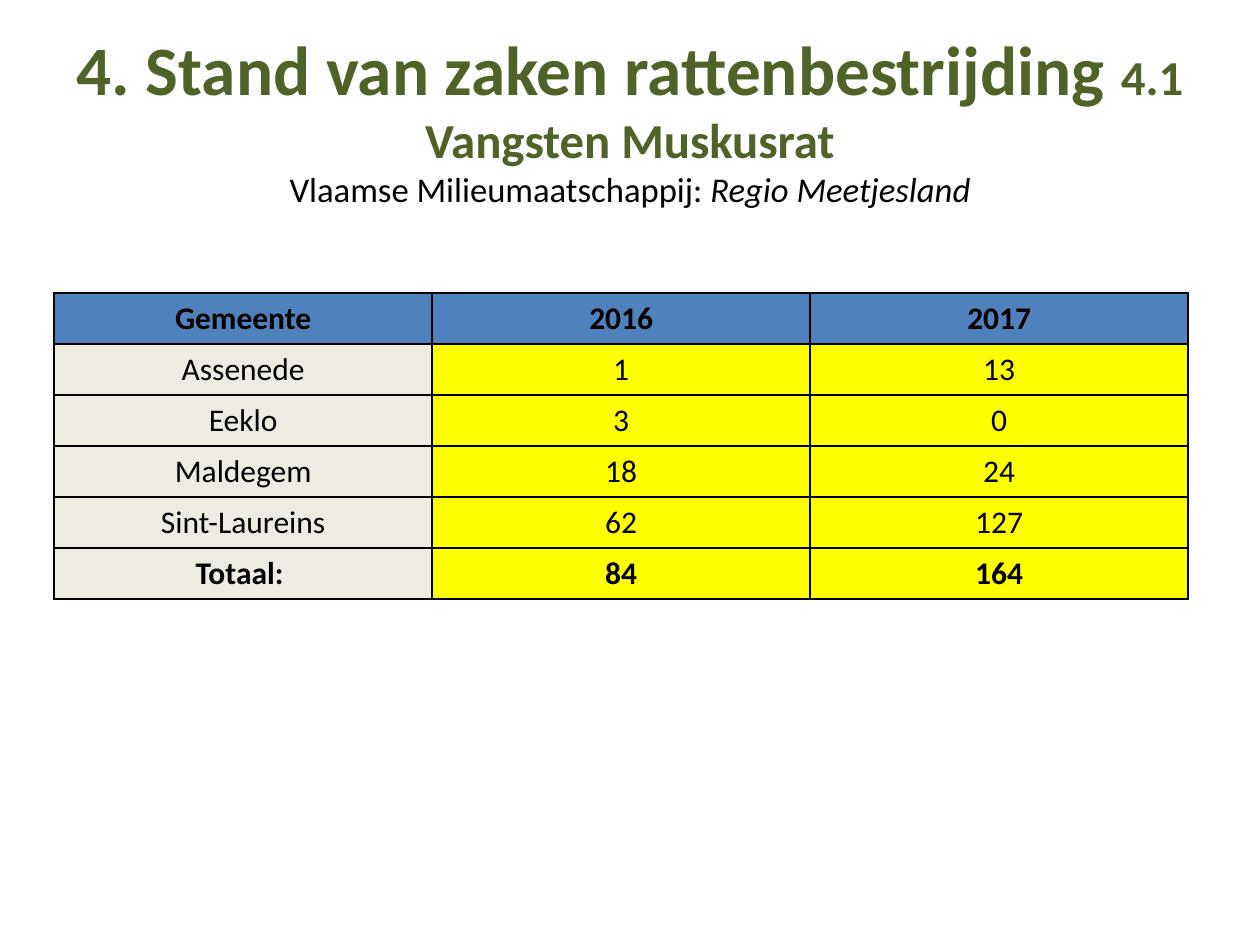
import pptx
import pptx.dml.color
import pptx.enum.text
import pptx.util
from lxml import etree

COLORS = {
    "green": "4F6228",
    "black": "000000",
    "blue": "4F81BD",
    "beige": "EEECE1",
    "yellow": "FFFF00",
}
CENTER = pptx.enum.text.PP_ALIGN.CENTER
MIDDLE = pptx.enum.text.MSO_ANCHOR.MIDDLE

TITLE_LINES = [
    [("4. Stand van zaken rattenbestrijding ", 39.6, "green", True, False),
     ("4.1 Vangsten Muskusrat", 27.9, "green", True, False)],
    [("Vlaamse Milieumaatschappij: ", 19.8, "black", False, False),
     ("Regio Meetjesland", 19.8, "black", False, True)],
]
CATCHES = [
    ("Gemeente", "2016", "2017"),
    ("Assenede", "1", "13"),
    ("Eeklo", "3", "0"),
    ("Maldegem", "18", "24"),
    ("Sint-Laureins", "62", "127"),
    ("Totaal: ", "84", "164"),
]


def rgb(name):
    return pptx.dml.color.RGBColor.from_string(COLORS[name])


class SlideBuilder:
    font_name = "Calibri"

    def __init__(self, deck):
        self.width, self.height = deck.slide_width, deck.slide_height
        self.page = deck.slides.add_slide(deck.slide_layouts[6])

    def area(self, left, top, width, height):
        """Turn shares of the slide's size into lengths."""
        return (int(left * self.width), int(top * self.height),
                int(width * self.width), int(height * self.height))

    def style(self, font, size, color, bold, italic=False):
        font.name = self.font_name
        font.size = pptx.util.Pt(size)
        font.color.rgb = rgb(color)
        font.bold, font.italic = bold, italic

    def title(self, lines, *shares):
        frame = self.page.shapes.add_textbox(*self.area(*shares)).text_frame
        frame.word_wrap = True
        frame.vertical_anchor = MIDDLE
        frame.margin_left = frame.margin_right = pptx.util.Inches(0.05)
        para = frame.paragraphs[0]
        para.alignment = CENTER
        for number, line in enumerate(lines):
            if number:
                para.add_line_break()
            for text, *look in line:
                span = para.add_run()
                span.text = text
                self.style(span.font, *look)

    def border(self, cell):
        properties = cell._tc.get_or_add_tcPr()
        namespace = "{http://schemas.openxmlformats.org/drawingml/2006/main}"
        for position, side in enumerate(("lnL", "lnR", "lnT", "lnB")):
            line = etree.Element(namespace + side, w=str(pptx.util.Pt(1)))
            fill = etree.SubElement(line, namespace + "solidFill")
            etree.SubElement(fill, namespace + "srgbClr", val=COLORS["black"])
            properties.insert(position, line)

    def table(self, rows, *shares):
        table = self.page.shapes.add_table(
            len(rows), len(rows[0]), *self.area(*shares)).table
        last = len(rows) - 1
        for row, values in enumerate(rows):
            for column, value in enumerate(values):
                cell = table.cell(row, column)
                color = "blue" if row == 0 else "yellow" if column else "beige"
                cell.fill.solid()
                cell.fill.fore_color.rgb = rgb(color)
                self.border(cell)
                cell.text = value
                para = cell.text_frame.paragraphs[0]
                para.alignment = CENTER
                self.style(para.font, 18, "black", row in (0, last))


def main():
    deck = pptx.Presentation()
    deck.slide_width = pptx.util.Inches(10)
    deck.slide_height = pptx.util.Inches(7.5)
    builder = SlideBuilder(deck)
    builder.title(TITLE_LINES, 0.05, 0.04, 0.9, 0.17)
    builder.table(CATCHES, 0.043, 0.31, 0.9, 0.324)
    deck.save("out.pptx")


if __name__ == "__main__":
    main()
